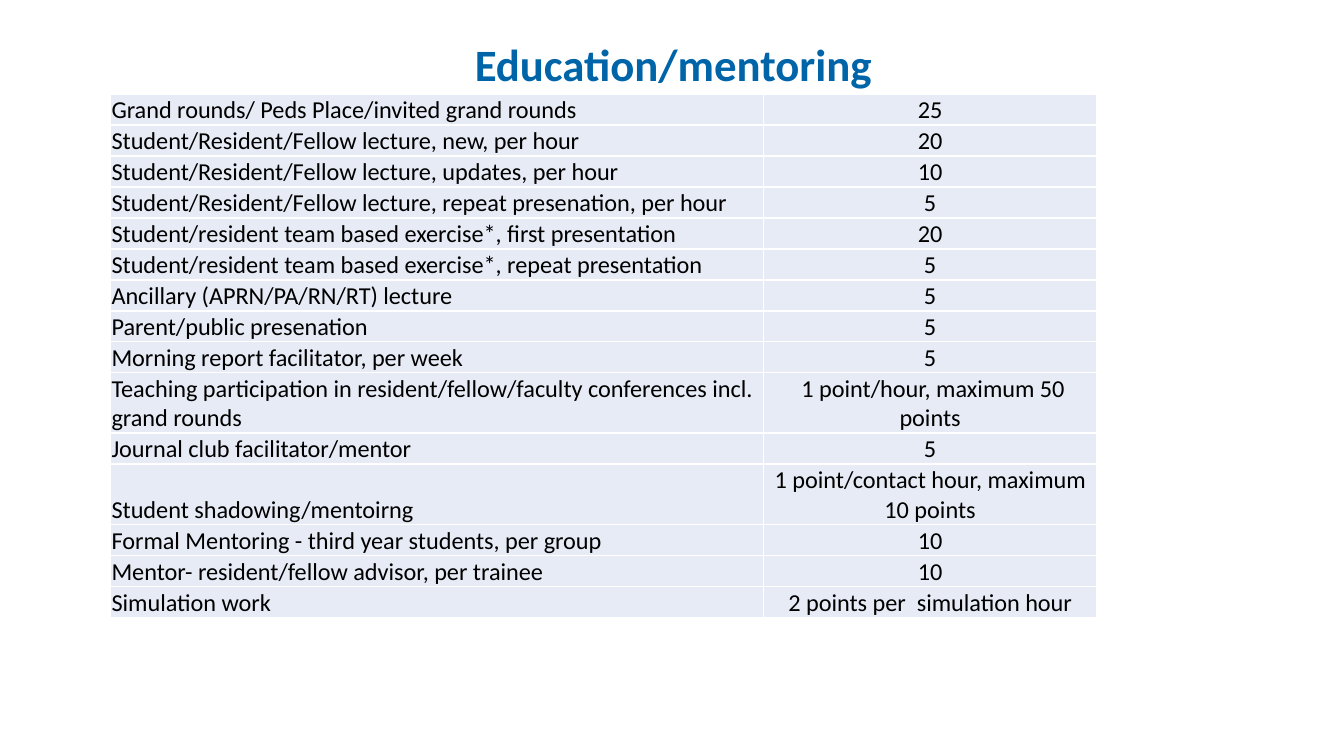
import pptx
import pptx.util
import pptx.dml.color
import pptx.enum.text
import pptx.oxml
import pptx.oxml.ns

Inches, Pt = pptx.util.Inches, pptx.util.Pt
Align, Anchor = pptx.enum.text.PP_ALIGN, pptx.enum.text.MSO_ANCHOR

# Content
HEADING = "Education/mentoring"
# activity, points, lines of text in the row
ACTIVITIES = [
    ("Grand rounds/ Peds Place/invited grand rounds", "25", 1),
    ("Student/Resident/Fellow lecture, new, per hour", "20", 1),
    ("Student/Resident/Fellow lecture, updates, per hour", "10", 1),
    ("Student/Resident/Fellow lecture, repeat presenation, per hour", "5", 1),
    ("Student/resident team based exercise*, first presentation", "20", 1),
    ("Student/resident team based exercise*, repeat presentation", "5", 1),
    ("Ancillary (APRN/PA/RN/RT) lecture", "5", 1),
    ("Parent/public presenation", "5", 1),
    ("Morning report facilitator, per week", "5", 1),
    ("Teaching participation in resident/fellow/faculty conferences incl. grand rounds",
     " 1 point/hour, maximum 50 points", 2),
    ("Journal club facilitator/mentor", "5", 1),
    ("Student shadowing/mentoirng", "1 point/contact hour, maximum 10 points", 2),
    ("Formal Mentoring - third year students, per group", "10", 1),
    ("Mentor- resident/fellow advisor, per trainee", "10", 1),
    ("Simulation work", "2 points per  simulation hour", 1),
]

# Theme and layout
THEME = {"font": "Calibri", "heading": "0064A8", "text": "000000",
         "cell": "E7EBF5", "border": "FFFFFF",
         "heading_size": 24, "text_size": 13, "border_width": 1}
SLIDE_WIDTH = 10
SLIDE_HEIGHT = SLIDE_WIDTH * 9 / 16
COLUMN_WIDTHS = (4.86, 2.48)
ROW_HEIGHTS = {1: 0.23, 2: 0.45}
TABLE_LEFT, TABLE_TOP = 0.82, 0.7


def rgb(name):
    return pptx.dml.color.RGBColor.from_string(THEME[name])


def write(frame, text, size="text_size", color="text", bold=False, align=Align.LEFT):
    paragraph = frame.paragraphs[0]
    paragraph.alignment = align
    run = paragraph.add_run()
    run.text = text
    run.font.name = THEME["font"]
    run.font.size = Pt(THEME[size])
    run.font.bold = bold
    run.font.color.rgb = rgb(color)


def add_borders(cell):
    properties = cell._tc.get_or_add_tcPr()
    for position, side in enumerate(("lnL", "lnR", "lnT", "lnB")):
        properties.insert(position, pptx.oxml.parse_xml(
            f'<a:{side} {pptx.oxml.ns.nsdecls("a")} w="{Pt(THEME["border_width"])}">'
            f'<a:solidFill><a:srgbClr val="{THEME["border"]}"/></a:solidFill></a:{side}>'))


def style_cell(cell):
    cell.fill.solid()
    cell.fill.fore_color.rgb = rgb("cell")
    cell.vertical_anchor = Anchor.BOTTOM
    cell.margin_left = cell.margin_right = cell.margin_top = Inches(0.01)
    cell.margin_bottom = 0
    add_borders(cell)


def main():
    deck = pptx.Presentation()
    deck.slide_width, deck.slide_height = Inches(SLIDE_WIDTH), Inches(SLIDE_HEIGHT)
    slide = deck.slides.add_slide(deck.slide_layouts[5])

    # Heading
    heading = slide.shapes.title
    heading.left, heading.top = Inches(0.51), 0
    heading.width, heading.height = Inches(9), Inches(0.94)
    heading.text_frame.vertical_anchor = Anchor.MIDDLE
    write(heading.text_frame, HEADING, size="heading_size", color="heading",
          bold=True, align=Align.CENTER)

    # Points table
    heights = [ROW_HEIGHTS[lines] for _, _, lines in ACTIVITIES]
    points_table = slide.shapes.add_table(
        len(ACTIVITIES), len(COLUMN_WIDTHS), Inches(TABLE_LEFT), Inches(TABLE_TOP),
        Inches(sum(COLUMN_WIDTHS)), Inches(sum(heights))).table
    points_table.first_row = points_table.horz_banding = False
    for column, width in zip(points_table.columns, COLUMN_WIDTHS):
        column.width = Inches(width)
    for row, height, (activity, points, _) in zip(points_table.rows, heights, ACTIVITIES):
        row.height = Inches(height)
        for cell, text, align in zip(row.cells, (activity, points),
                                     (Align.LEFT, Align.CENTER)):
            style_cell(cell)
            write(cell.text_frame, text, align=align)

    deck.save("out.pptx")


if __name__ == "__main__":
    main()
